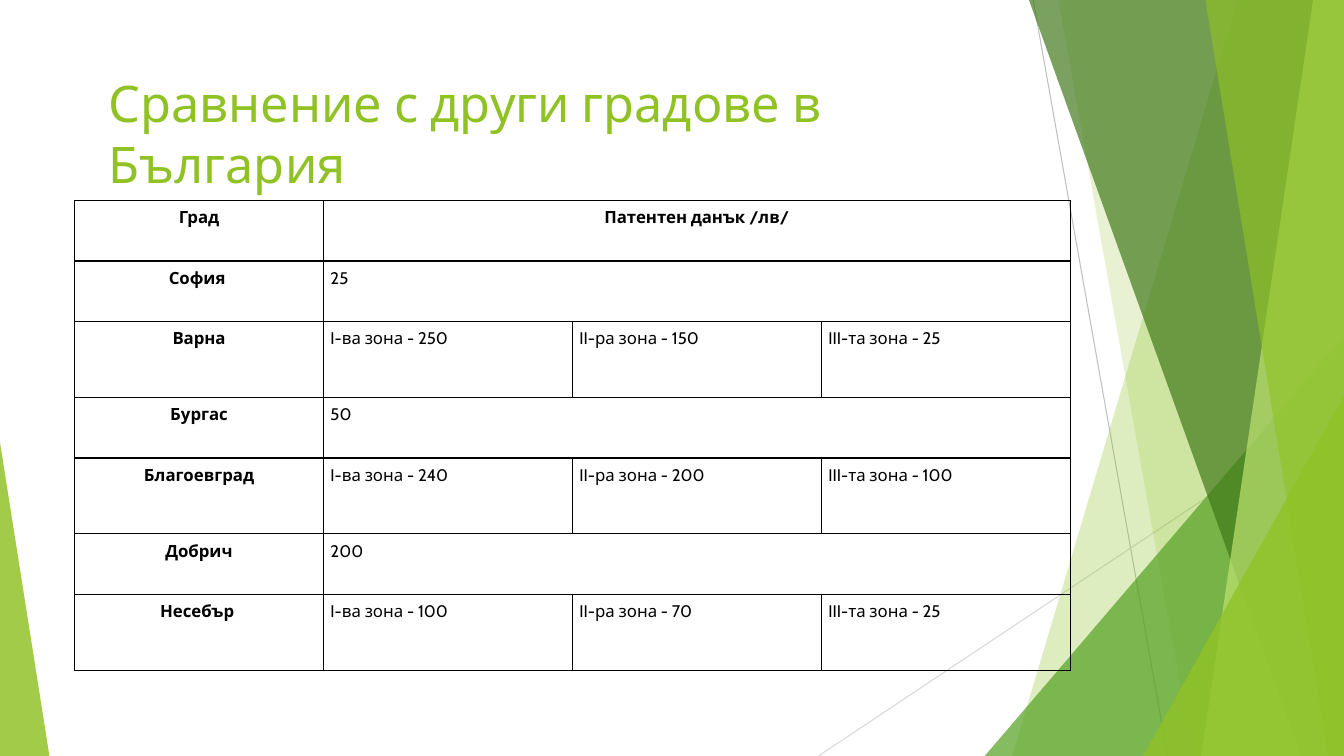
from lxml import etree
from pptx import Presentation
from pptx.dml.color import RGBColor
from pptx.enum.shapes import MSO_CONNECTOR, MSO_SHAPE
from pptx.enum.text import MSO_ANCHOR, PP_ALIGN
from pptx.oxml.ns import qn
from pptx.util import Pt

STRAIGHT = MSO_CONNECTOR.STRAIGHT
TRIANGLE = MSO_SHAPE.ISOSCELES_TRIANGLE
TOP = MSO_ANCHOR.TOP
LEFT, CENTER = PP_ALIGN.LEFT, PP_ALIGN.CENTER

BLACK = RGBColor(0x00, 0x00, 0x00)
GREEN = RGBColor(0x90, 0xC2, 0x26)
GRASS = RGBColor(0x54, 0xA0, 0x21)
FOREST = RGBColor(0x3F, 0x78, 0x18)
LIME = RGBColor(0xBF, 0xE4, 0x71)
GREY = RGBColor(0xBF, 0xBF, 0xBF)
PALE = RGBColor(0xD8, 0xD8, 0xD8)

WIDTH, HEIGHT = 960, 540
COLUMN = 177.8
PLAIN_ROW, ZONE_ROW = 43.2, 54.2

TAXES = [
    ("Град", "Патентен данък /лв/"),
    ("София ", "25"),
    ("Варна", "I-ва зона - 250", "II-ра зона - 150", "III-та зона - 25"),
    ("Бургас", "50"),
    ("Благоевград", "I-ва зона - 240", "II-ра зона - 200", "III-та зона - 100"),
    ("Добрич", "200"),
    ("Несебър ", "I-ва зона - 100", "II-ра зона - 70", "III-та зона - 25"),
]


def write(frame, text, font="Cabin", size=12, color=BLACK, bold=False, align=LEFT):
    line = frame.paragraphs[0]
    line.alignment = align
    run = line.add_run()
    run.text = text
    run.font.name = font
    run.font.size = Pt(size)
    run.font.bold = bold
    run.font.color.rgb = color


def paint(shape, color, alpha):
    shape.shadow.inherit = False
    shape.line.fill.background()
    shape.fill.solid()
    shape.fill.fore_color.rgb = color
    tint = shape.element.spPr.find(qn("a:solidFill"))[0]
    etree.SubElement(tint, qn("a:alpha"), val=str(alpha * 1000))


def add_line(slide, start, end, color):
    line = slide.shapes.add_connector(
        STRAIGHT, Pt(start[0]), Pt(start[1]), Pt(end[0]), Pt(end[1]))
    line.line.color.rgb = color
    line.line.width = Pt(0.75)
    etree.SubElement(line.element.spPr, qn("a:effectLst"))


def add_pane(slide, top, foot, color, alpha):
    pen = slide.shapes.build_freeform(Pt(top), 0)
    corners = [(WIDTH, 0), (WIDTH, HEIGHT), (foot, HEIGHT)]
    pen.add_line_segments([(Pt(x), Pt(y)) for x, y in corners], close=True)
    paint(pen.convert_to_shape(), color, alpha)


def add_wedge(slide, left, top, width, peak, color, alpha):
    wedge = slide.shapes.add_shape(
        TRIANGLE, Pt(left), Pt(top), Pt(width), Pt(HEIGHT - top))
    wedge.adjustments[0] = peak
    paint(wedge, color, alpha)


def add_title(slide, text):
    box = slide.shapes.add_textbox(Pt(70.6), Pt(48), Pt(676.8), Pt(104))
    box.text_frame.word_wrap = True
    box.text_frame.vertical_anchor = TOP
    write(box.text_frame, text, font="Karla", size=36, color=GREEN)


def style_cell(cell):
    cell.fill.background()
    cell.margin_left = cell.margin_right = Pt(5)
    cell.margin_top = cell.margin_bottom = Pt(5)
    props = cell._tc.get_or_add_tcPr()
    for place, side in enumerate(("a:lnL", "a:lnR", "a:lnT", "a:lnB")):
        edge = etree.Element(qn(side), w=str(Pt(1)))
        fill = etree.SubElement(edge, qn("a:solidFill"))
        etree.SubElement(fill, qn("a:srgbClr"), val=str(BLACK))
        props.insert(place, edge)


def add_taxes(slide, left, top):
    heights = [ZONE_ROW if len(row) == 4 else PLAIN_ROW for row in TAXES]
    table = slide.shapes.add_table(
        len(TAXES), 4, Pt(left), Pt(top), Pt(4 * COLUMN), Pt(sum(heights))).table
    table.first_row = table.horz_banding = False
    for column in table.columns:
        column.width = Pt(COLUMN)
    for r, row in enumerate(TAXES):
        table.rows[r].height = Pt(heights[r])
        for c in range(4):
            style_cell(table.cell(r, c))
        if len(row) == 2:
            table.cell(r, 1).merge(table.cell(r, 3))
        for c, text in enumerate(row):
            head = r == 0 or c == 0
            write(table.cell(r, c).text_frame, text, bold=head,
                  align=CENTER if head else LEFT)


def main():
    deck = Presentation()
    deck.slide_width, deck.slide_height = Pt(WIDTH), Pt(HEIGHT)
    slide = deck.slides.add_slide(deck.slide_layouts[6])
    add_line(slide, (738, 0), (834, HEIGHT), GREY)
    add_line(slide, (WIDTH, 290), (584.6, HEIGHT), PALE)
    add_pane(slide, 884, 723, GREEN, 29)
    add_pane(slide, 756, 852, GREEN, 20)
    add_wedge(slide, 703.4, 240, 256.6, 1, GRASS, 71)
    add_pane(slide, 735, 929.5, FOREST, 69)
    add_pane(slide, 938, 858, LIME, 69)
    add_pane(slide, 861, 949, GREEN, 64)
    add_wedge(slide, 816.5, 283, 143.5, 1, GREEN, 80)
    add_wedge(slide, 0, 316, 35.3, 0, GREEN, 84)
    add_title(slide, "Сравнение с други градове в България")
    add_taxes(slide, 53.3, 143.3)
    deck.save("out.pptx")


if __name__ == "__main__":
    main()
